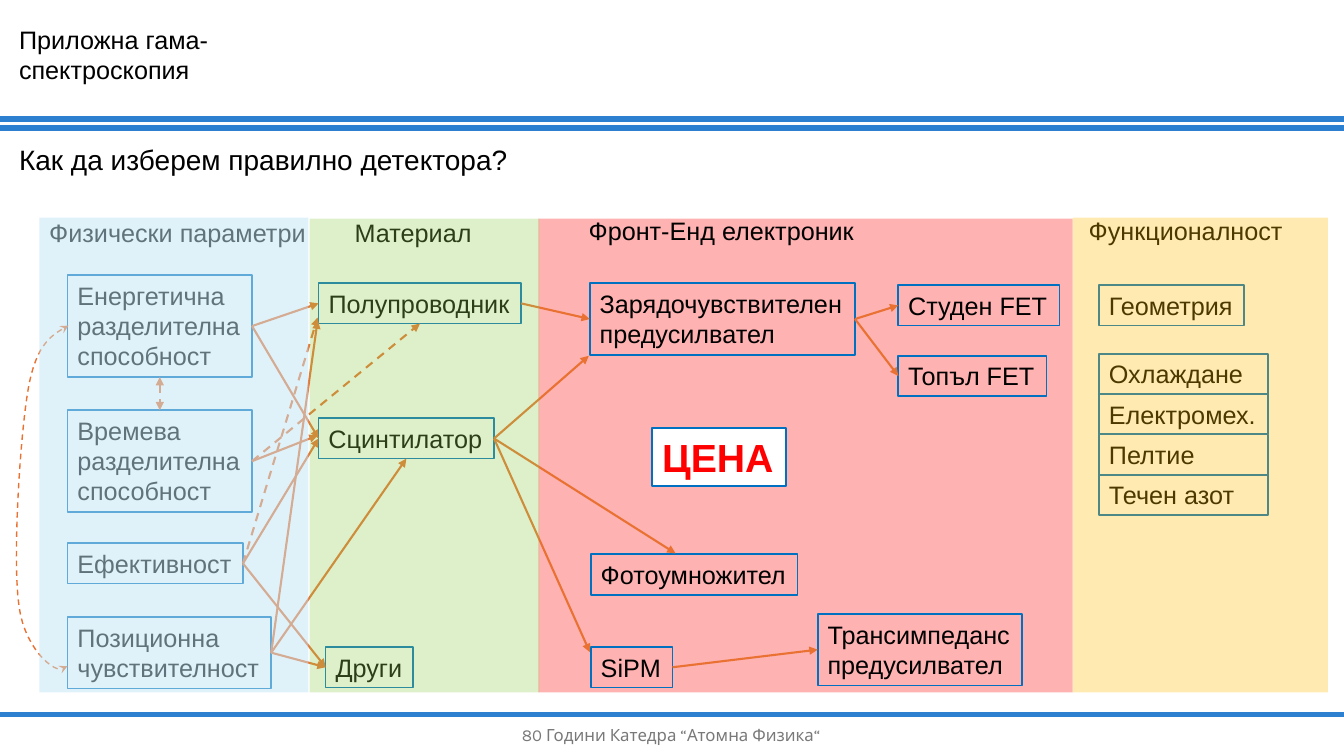
import pptx
import pptx.dml.color
import pptx.enum.dml
import pptx.enum.shapes
import pptx.enum.text
import pptx.oxml
import pptx.oxml.ns
import pptx.util
from dataclasses import dataclass

Inches, Pt = pptx.util.Inches, pptx.util.Pt
TOP, LEFT, BOTTOM, RIGHT = range(4)


@dataclass(frozen=True)
class Theme:
    font: str = "Arial"
    footer_font: str = "Karla"
    body: int = 18
    heading: int = 20
    price: int = 28
    footer: int = 12
    text: str = "000000"
    muted: str = "797979"
    rule: str = "2D7FCF"
    outline: str = "0070C0"
    arrow: str = "E97132"
    white: str = "FFFFFF"
    red: str = "FF0000"
    blue: str = "C1E5F5"
    green: str = "92D050"
    amber: str = "FFC000"


def rgb(value):
    return pptx.dml.color.RGBColor.from_string(value)


def add_element(parent, tag, **attributes):
    child = pptx.oxml.parse_xml(f"<{tag} {pptx.oxml.ns.nsdecls('a')}/>")
    for name, value in attributes.items():
        child.set(name, value)
    parent.append(child)


class DetectorSlide:
    """Draws the elements of the detector selection slide in one style."""

    def __init__(self, page, theme):
        self.shapes, self.theme = page.shapes, theme

    def band(self, left, top, width, height, color, opacity):
        band = self.shapes.add_shape(
            pptx.enum.shapes.MSO_SHAPE.RECTANGLE,
            Inches(left), Inches(top), Inches(width), Inches(height))
        band.shadow.inherit = False
        band.line.fill.background()
        band.fill.solid()
        band.fill.fore_color.rgb = rgb(color)
        fill_color = band.element.spPr.find(".//" + pptx.oxml.ns.qn("a:srgbClr"))
        add_element(fill_color, "a:alpha", val=str(opacity * 1000))

    def text(self, left, top, width, height, words, size=None, color=None,
             font=None, bold=None, wrap=False, centered=False):
        box = self.shapes.add_textbox(
            Inches(left), Inches(top), Inches(width), Inches(height))
        frame = box.text_frame
        frame.text = words
        frame.word_wrap = wrap
        if centered:
            frame.vertical_anchor = pptx.enum.text.MSO_ANCHOR.MIDDLE
        else:
            frame.auto_size = pptx.enum.text.MSO_AUTO_SIZE.SHAPE_TO_FIT_TEXT
        for para in frame.paragraphs:
            if centered:
                para.alignment = pptx.enum.text.PP_ALIGN.CENTER
            para.font.name = font or self.theme.font
            para.font.size = Pt(size or self.theme.body)
            para.font.bold = bold
            para.font.color.rgb = rgb(color or self.theme.text)
        return box

    def label(self, left, top, width, height, words, fill=None, **style):
        box = self.text(left, top, width, height, words, **style)
        box.line.color.rgb = rgb(self.theme.outline)
        box.line.width = Pt(1.25)
        if fill:
            box.fill.solid()
            box.fill.fore_color.rgb = rgb(fill)
        return box

    def stroke(self, shape, color, width, dashed=False, head=None, tail=None):
        shape.line.color.rgb = rgb(color)
        shape.line.width = Pt(width)
        if dashed:
            shape.line.dash_style = pptx.enum.dml.MSO_LINE.DASH
        outline = shape.element.spPr.find(pptx.oxml.ns.qn("a:ln"))
        for tag, kind in (("a:headEnd", head), ("a:tailEnd", tail)):
            if kind:
                add_element(outline, tag, type=kind)

    def line(self, start, end, color, width, **style):
        connector = self.shapes.add_connector(
            pptx.enum.shapes.MSO_CONNECTOR.STRAIGHT, *map(Inches, start + end))
        self.stroke(connector, color, width, **style)
        add_element(connector.element.spPr, "a:effectLst")
        return connector

    def rule(self, height):
        self.line((0, height), (13.33, height), self.theme.rule, 3.75)

    def arrow(self, box, side, target, dashed=False, head=None):
        """Joins a box side to another box side or to a free point."""
        joined = not isinstance(target[0], (int, float))
        end = (0, 0) if joined else target
        connector = self.line((0, 0), end, self.theme.arrow, 1.5,
                              dashed=dashed, head=head, tail="triangle")
        connector.begin_connect(box, side)
        if joined:
            connector.end_connect(*target)

    def curve(self, start, segments, steps=16):
        points, origin = [], start
        for first, second, end in segments:
            for step in range(1, steps + 1):
                t = step / steps
                weights = ((1 - t) ** 3, 3 * t * (1 - t) ** 2, 3 * t * t * (1 - t), t ** 3)
                points.append(tuple(
                    Inches(sum(w * c for w, c in zip(weights, axis)))
                    for axis in zip(origin, first, second, end)))
            origin = end
        builder = self.shapes.build_freeform(*map(Inches, start))
        builder.add_line_segments(points, close=False)
        curve = builder.convert_to_shape()
        curve.shadow.inherit = False
        curve.fill.background()
        self.stroke(curve, self.theme.arrow, 1, dashed=True, head="stealth", tail="stealth")


def main():
    deck = pptx.Presentation()
    deck.slide_width, deck.slide_height = Inches(13.33), Inches(7.5)
    theme = Theme()
    slide = DetectorSlide(deck.slides.add_slide(deck.slide_layouts[6]), theme)

    slide.band(5.34, 2.17, 5.3, 4.7, theme.red, 30)
    for height in (1.18, 1.27, 7.09):
        slide.rule(height)
    slide.text(4.41, 7.09, 4.5, 0.4, "80 Години Катедра “Атомна Физика“", size=theme.footer,
               color=theme.muted, font=theme.footer_font, wrap=True, centered=True)
    slide.text(0.09, 0.19, 2.55, 0.71, "Приложна гама-спектроскопия", wrap=True)
    slide.text(0.09, 1.36, 5.08, 0.44, "Как да изберем правилно детектора?", size=theme.heading)
    for left, top, width, words in (
            (0.39, 2.11, 2.77, "Физически параметри"), (3.42, 2.11, 1.37, "Материал"),
            (5.74, 2.09, 2.86, "Фронт-Енд електроник"), (10.7, 2.09, 2.14, "Функционалност")):
        slide.text(left, top, width, 0.4, words)

    energy = slide.label(0.67, 2.73, 1.83, 1.01, "Енергетична\nразделителна\nспособност")
    timing = slide.label(0.67, 4.07, 1.83, 1.01, "Времева\nразделителна\nспособност")
    efficiency = slide.label(0.67, 5.39, 1.74, 0.4, "Ефективност")
    position = slide.label(0.67, 6.12, 2.02, 0.71, "Позиционна\nчувствителност")
    semiconductor = slide.label(3.16, 2.81, 2.01, 0.4, "Полупроводник")
    scintillator = slide.label(3.16, 4.15, 1.74, 0.4, "Сцинтилатор")
    others = slide.label(3.23, 6.42, 0.87, 0.4, "Други")
    sipm = slide.label(5.86, 6.42, 0.81, 0.4, "SiPM")
    slide.label(5.86, 5.5, 2.05, 0.4, "Фотоумножител")
    charge = slide.label(5.85, 2.81, 2.63, 0.71, "Зарядочувствителен\nпредусилвател")
    cold_fet = slide.label(8.91, 2.83, 1.6, 0.4, "Студен FET")
    warm_fet = slide.label(8.91, 3.53, 1.47, 0.4, "Топъл FET")
    transimpedance = slide.label(8.11, 6.09, 2.03, 0.71, "Трансимпеданс\nпредусилвател")
    slide.label(10.9, 2.83, 1.44, 0.4, "Геометрия")
    for row, words in enumerate(("Охлаждане", "Електромех.", "Пелтие", "Течен азот")):
        slide.label(10.9, 3.51 + 0.4 * row, 1.68, 0.4, words, wrap=True)

    slide.curve((0.68, 3.23), (
        ((0.52, 3.32), (0.36, 3.4), (0.28, 3.86)),
        ((0.2, 4.32), (0.12, 5.56), (0.19, 6.02)),
        ((0.25, 6.47), (0.6, 6.74), (0.67, 6.61))))
    slide.arrow(energy, BOTTOM, (timing, TOP), dashed=True, head="triangle")
    for source, target, dashed in (
            (energy, (semiconductor, LEFT), False),
            (energy, (scintillator, LEFT), False),
            (efficiency, (scintillator, LEFT), False),
            (timing, (semiconductor, BOTTOM), True),
            (timing, (3.15, 4.32), False),
            (efficiency, (3.15, 3.15), True),
            (efficiency, (others, LEFT), False),
            (position, (3.15, 3.18), False),
            (position, (scintillator, BOTTOM), False),
            (position, (others, LEFT), False),
            (scintillator, (5.85, 6.47), False),
            (scintillator, (6.7, 5.49), False),
            (scintillator, (5.84, 3.53), False),
            (semiconductor, (charge, LEFT), False),
            (charge, (cold_fet, LEFT), False),
            (sipm, (transimpedance, LEFT), False),
            (charge, (warm_fet, LEFT), False)):
        slide.arrow(source, RIGHT, target, dashed)

    slide.band(0.39, 2.16, 2.67, 4.71, theme.blue, 50)
    slide.band(3.07, 2.17, 2.28, 4.7, theme.green, 30)
    slide.label(6.47, 4.25, 1.33, 0.57, "ЦЕНА", fill=theme.white, size=theme.price,
                color=theme.red, bold=True, wrap=True)
    slide.band(10.64, 2.16, 2.53, 4.71, theme.amber, 30)
    deck.save("out.pptx")


if __name__ == "__main__":
    main()
